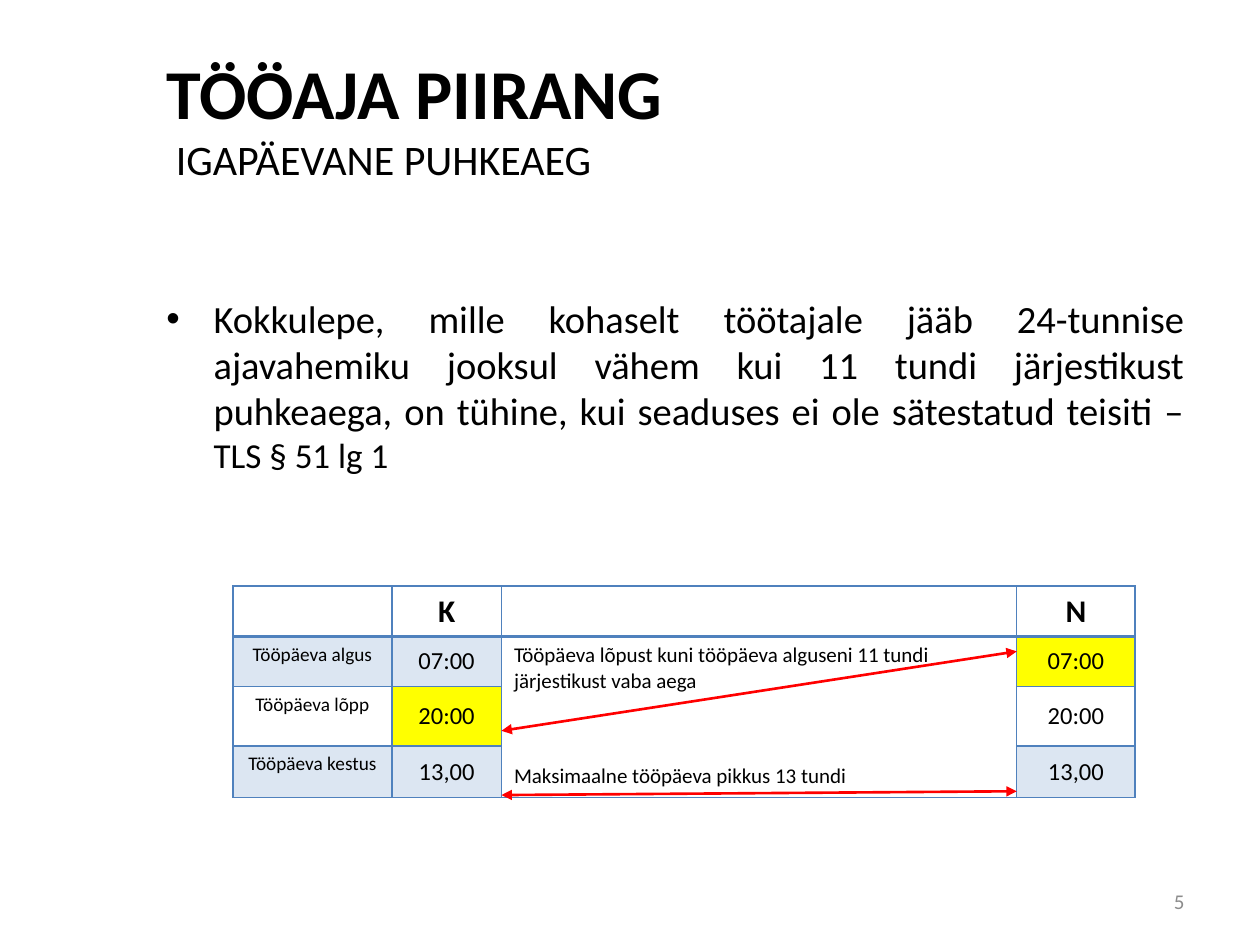
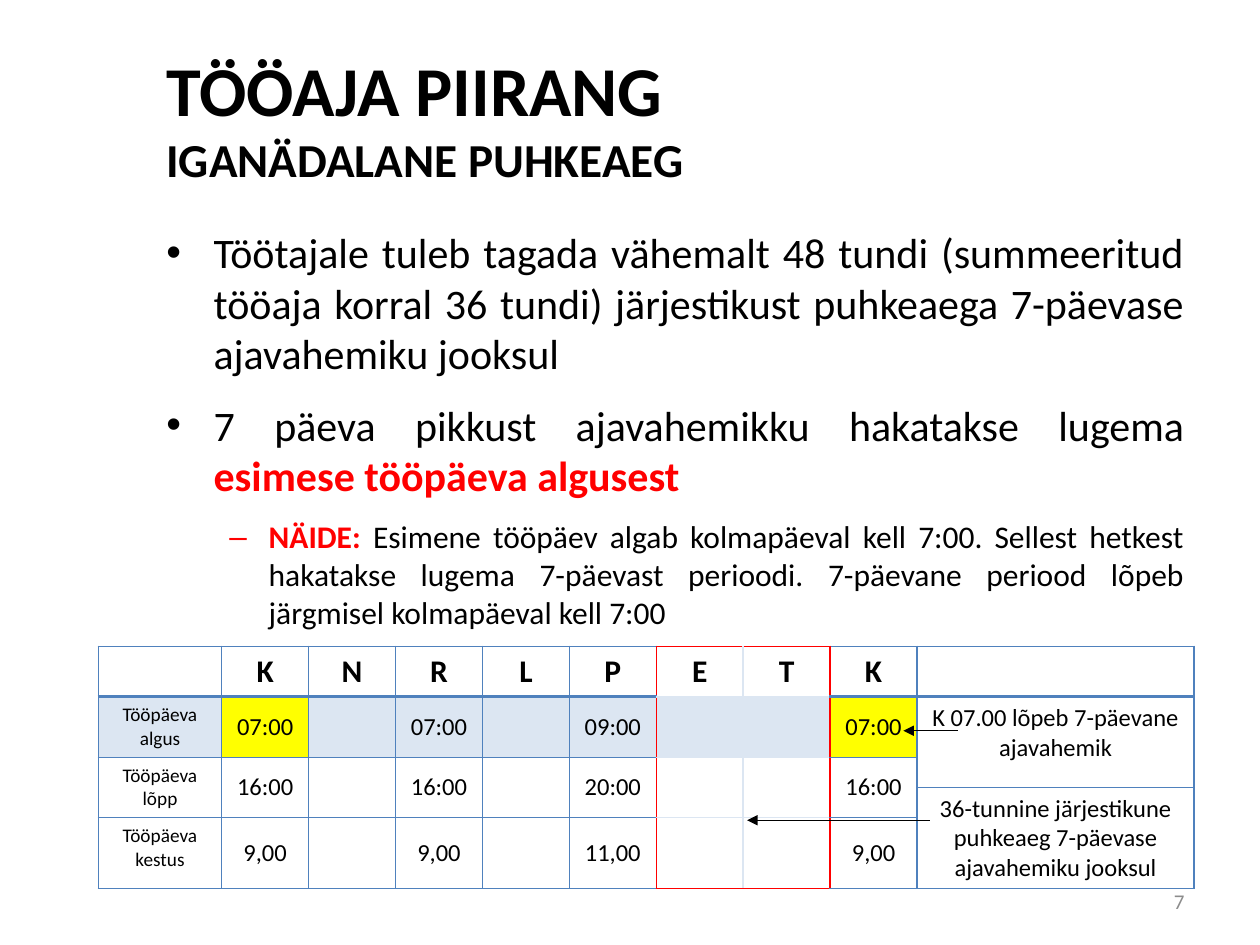
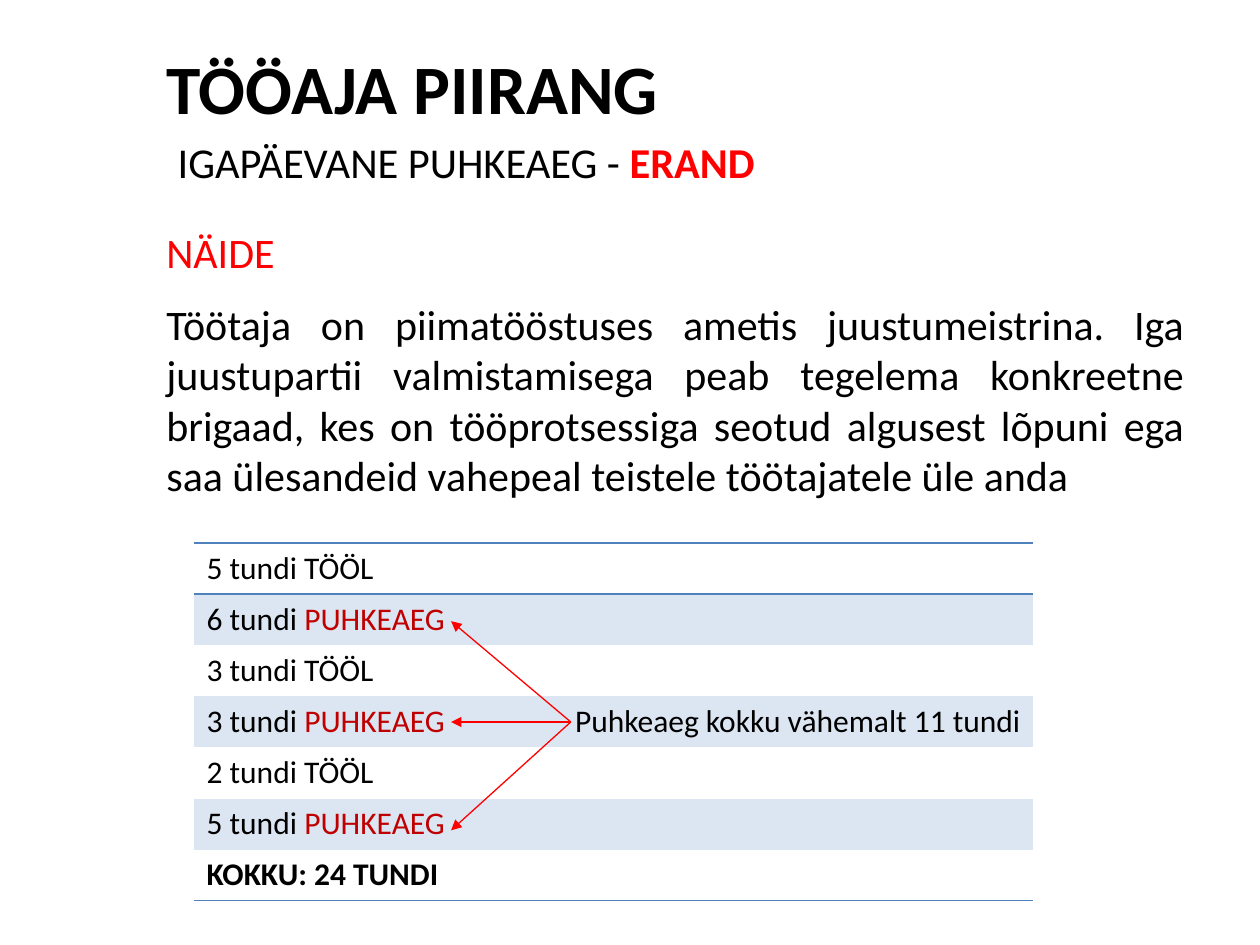
from lxml.etree import SubElement
from pptx import Presentation
from pptx.dml.color import RGBColor
from pptx.enum.shapes import MSO_CONNECTOR
from pptx.enum.text import MSO_ANCHOR, MSO_AUTO_SIZE, PP_ALIGN
from pptx.oxml.ns import qn
from pptx.util import Inches, Pt

FONT = "Calibri"
BLACK = "000000"
RED = "FF0000"
DARK_RED = "C00000"
BLUE = "4F81BD"
PALE = "DCE6F2"
YELLOW = "FFFF00"
GREY = "8C8C8C"
TITLE_BOX = (1.22, 0.3, 8.28, 1.25)
BODY_BOX = (1.22, 1.75, 8.28, 5.07)
NUMBER_BOX = (7.17, 6.95, 2.33, 0.4)


def rgb(color):
    return RGBColor.from_string(color)


def place(sp, box):
    sp.left, sp.top, sp.width, sp.height = map(Inches, box)


def write(p, runs):
    for text, size, color, bold in runs:
        r = p.add_run()
        r.text = text
        r.font.name = FONT
        r.font.size = Pt(size)
        r.font.bold = bold
        r.font.color.rgb = rgb(color)


def add_title(s, heading, subtitle):
    sp = s.shapes.title
    place(sp, TITLE_BOX)
    tf = sp.text_frame
    tf.auto_size = MSO_AUTO_SIZE.NONE
    tf.vertical_anchor = MSO_ANCHOR.MIDDLE
    p = tf.paragraphs[0]
    p.alignment = PP_ALIGN.LEFT
    write(p, heading)
    p.add_line_break()
    write(p, subtitle)


def add_body(s, items, bullets=True, top_inset=0.05):
    sp = s.placeholders[1]
    place(sp, BODY_BOX)
    tf = sp.text_frame
    tf.auto_size = MSO_AUTO_SIZE.NONE
    tf.margin_top = Inches(top_inset)
    for i, (level, runs) in enumerate(items):
        p = tf.paragraphs[0] if i == 0 else tf.add_paragraph()
        p.level = level
        p.alignment = PP_ALIGN.JUSTIFY
        p.space_before = p.space_after = Pt(4 if level else 6)
        if not bullets:
            pPr = p._p.get_or_add_pPr()
            pPr.set("marL", "0")
            pPr.set("indent", "0")
            SubElement(pPr, qn("a:buNone"))
        write(p, runs)


def add_number(s, number):
    sp = s.shapes.add_textbox(*map(Inches, NUMBER_BOX))
    tf = sp.text_frame
    tf.word_wrap = True
    tf.vertical_anchor = MSO_ANCHOR.MIDDLE
    p = tf.paragraphs[0]
    p.alignment = PP_ALIGN.RIGHT
    write(p, [(number, 12, GREY, False)])


def add_arrow(s, start, end, color, width, both_ends=False):
    line = s.shapes.add_connector(
        MSO_CONNECTOR.STRAIGHT, *map(Inches, (*start, *end)))
    line.line.color.rgb = rgb(color)
    line.line.width = Pt(width)
    spPr = line.element.spPr
    ln = spPr.find(qn("a:ln"))
    for tag in ("a:headEnd", "a:tailEnd") if both_ends else ("a:tailEnd",):
        SubElement(ln, qn(tag), type="triangle")
    SubElement(spPr, qn("a:effectLst"))


def set_borders(cell, edges):
    tcPr = cell._tc.get_or_add_tcPr()
    for side in "LRTB":
        color, width = edges.get(side, (None, 1))
        ln = SubElement(tcPr, qn("a:ln" + side), w=str(Pt(width)))
        if color:
            fill = SubElement(ln, qn("a:solidFill"))
            SubElement(fill, qn("a:srgbClr"), val=color)
        else:
            SubElement(ln, qn("a:noFill"))


def add_table(s, left, top, cols, rows, fill_of, edges_of):
    frame = s.shapes.add_table(
        len(rows), len(cols), *map(Inches, (left, top, sum(cols), sum(rows))))
    table = frame.table
    table.first_row = table.horz_banding = False
    for column, width in zip(table.columns, cols):
        column.width = Inches(width)
    for row, height in zip(table.rows, rows):
        row.height = Inches(height)
    for i in range(len(rows)):
        for j in range(len(cols)):
            cell = table.cell(i, j)
            set_borders(cell, edges_of(i, j))
            color = fill_of(i, j)
            if color:
                cell.fill.solid()
                cell.fill.fore_color.rgb = rgb(color)
            else:
                cell.fill.background()
            SubElement(cell.text_frame.paragraphs[0]._p,
                       qn("a:endParaRPr"), sz="1100")
    return table


def fill_cell(cell, runs, align=PP_ALIGN.CENTER, anchor=MSO_ANCHOR.TOP):
    cell.vertical_anchor = anchor
    p = cell.text_frame.paragraphs[0]
    p.alignment = align
    write(p, runs)


def fill_schedule(table, days, labelled_rows):
    for j, day in days.items():
        fill_cell(table.cell(0, j), [(day, 18, BLACK, True)],
                  anchor=MSO_ANCHOR.MIDDLE)
    for i, (label, times) in labelled_rows.items():
        fill_cell(table.cell(i, 0), [(label, 11, BLACK, False)])
        for j, time in times.items():
            fill_cell(table.cell(i, j), [(time, 14, BLACK, False)],
                      anchor=MSO_ANCHOR.MIDDLE)


def grid_edges(i, j):
    edges = {side: (BLUE, 1) for side in "LRTB"}
    if i < 2:
        edges["B" if i == 0 else "T"] = (BLUE, 2)
    return edges


def rest_day_edges(i, j):
    edges = grid_edges(i, j)
    if j == 5:
        edges["R"] = (RED, 1)
    elif j == 8:
        edges["L"] = (RED, 1)
    elif j in (6, 7):
        edges = {"L": (RED if j == 6 else PALE, 1),
                 "R": (RED if j == 7 else PALE, 1),
                 "T": (RED if i == 0 else PALE, 1),
                 "B": (RED if i == 4 else PALE, 1)}
    return edges


def daily_rest(s):
    add_title(s, [("TÖÖAJA PIIRANG", 40, BLACK, True)],
              [(" IGAPÄEVANE PUHKEAEG", 24, BLACK, False)])
    add_body(s, [(0, [
        ("Kokkulepe, mille kohaselt töötajale jääb 24-tunnise ajavahemiku "
         "jooksul vähem kui 11 tundi järjestikust puhkeaega, on tühine, kui "
         "seaduses ei ole sätestatud teisiti – ", 22, BLACK, False),
        ("TLS § 51 lg 1", 20, BLACK, False)])], top_inset=0.59)
    add_number(s, "5")

    def fill_of(i, j):
        if (i, j) in ((1, 3), (2, 1)):
            return YELLOW
        return PALE if i in (1, 3) and j != 2 else None

    table = add_table(s, 1.85, 4.65, [1.26, 0.87, 4.09, 0.94],
                      [0.4, 0.4, 0.47, 0.41], fill_of, grid_edges)
    table.cell(1, 2).merge(table.cell(3, 2))
    fill_schedule(table, {1: "K", 3: "N"}, {
        i: (label, {1: time, 3: time}) for i, (label, time) in enumerate([
            ("Tööpäeva algus", "07:00"),
            ("Tööpäeva lõpp", "20:00"),
            ("Tööpäeva kestus", "13,00")], 1)})
    note = table.cell(1, 2)
    fill_cell(note, [("Tööpäeva lõpust kuni tööpäeva alguseni 11 tundi "
                      "järjestikust vaba aega", 12, BLACK, False)],
              PP_ALIGN.LEFT)
    p = note.text_frame.add_paragraph()
    p.space_before = Pt(40)
    write(p, [("Maksimaalne tööpäeva pikkus 13 tundi", 12, BLACK, False)])
    add_arrow(s, (3.98, 5.8), (8.07, 5.17), RED, 1.5, True)
    add_arrow(s, (3.98, 6.31), (8.07, 6.28), RED, 1.5, True)


def weekly_rest(s):
    add_title(s, [("TÖÖAJA PIIRANG", 40, BLACK, True)],
              [("IGANÄDALANE PUHKEAEG", 27, BLACK, True)])
    add_body(s, [
        (0, [("Töötajale tuleb tagada vähemalt 48 tundi (summeeritud tööaja "
              "korral 36 tundi) järjestikust puhkeaega 7-päevase ajavahemiku "
              "jooksul", 24, BLACK, False)]),
        (0, [("7 päeva pikkust ajavahemikku hakatakse lugema ",
              24, BLACK, False),
             ("esimese tööpäeva algusest", 24, RED, True)]),
        (1, [("NÄIDE:", 18, RED, True),
             (" Esimene tööpäev algab kolmapäeval kell 7:00. Sellest hetkest "
              "hakatakse lugema 7-päevast perioodi. 7-päevane periood lõpeb "
              "järgmisel kolmapäeval kell 7:00", 18, BLACK, False)])])
    add_number(s, "7")

    def fill_of(i, j):
        if i == 1 and j in (1, 8):
            return YELLOW
        return PALE if i == 1 and j != 9 else None

    table = add_table(s, 0.78, 5.13, [0.98] + [0.69] * 8 + [2.2],
                      [0.4, 0.48, 0.24, 0.24, 0.56], fill_of, rest_day_edges)
    for j in range(9):
        table.cell(2, j).merge(table.cell(3, j))
    fill_schedule(table, dict(enumerate("KNRLPETK", 1)), {
        i: (label, dict(zip((1, 3, 5, 8), times))) for i, label, times in [
            (1, "Tööpäeva algus", ("07:00", "07:00", "09:00", "07:00")),
            (2, "Tööpäeva lõpp", ("16:00", "16:00", "20:00", "16:00")),
            (4, "Tööpäeva kestus", ("9,00", "9,00", "11,00", "9,00"))]})
    for i, note in [
            (1, "K 07.00 lõpeb 7-päevane ajavahemik"),
            (3, "36-tunnine järjestikune puhkeaeg 7-päevase ajavahemiku "
                "jooksul")]:
        table.cell(i, 9).merge(table.cell(i + 1, 9))
        fill_cell(table.cell(i, 9), [(note, 14, BLACK, False)])
    add_arrow(s, (7.6, 5.8), (7.17, 5.8), BLACK, 0.75)
    add_arrow(s, (7.38, 6.51), (5.93, 6.51), BLACK, 0.75)


def daily_rest_exception(s):
    add_title(s, [("TÖÖAJA PIIRANG", 39.6, BLACK, True)],
              [(" ", 28.8, BLACK, False),
               ("IGAPÄEVANE PUHKEAEG - ", 24.3, BLACK, False),
               ("ERAND", 24.3, RED, True)])
    add_body(s, [
        (0, [("NÄIDE", 24, RED, False)]),
        (0, [("Töötaja on piimatööstuses ametis juustumeistrina. Iga "
              "juustupartii valmistamisega peab tegelema konkreetne brigaad, "
              "kes on tööprotsessiga seotud algusest lõpuni ega saa "
              "ülesandeid vahepeal teistele töötajatele üle anda",
              24, BLACK, False)])], bullets=False)

    def fill_of(i, j):
        return PALE if i % 2 else None

    def edges_of(i, j):
        sides = {0: "TB", 1: "T", 6: "B"}.get(i, "")
        return {side: (BLUE, 1) for side in sides}

    table = add_table(s, 1.54, 4.31, [2.36, 4.3], [0.4] * 7,
                      fill_of, edges_of)
    for i, hours in enumerate((5, 6, 3, 3, 2, 5)):
        kind, color = ("PUHKEAEG", DARK_RED) if i % 2 else ("TÖÖL", BLACK)
        fill_cell(table.cell(i, 0), [(f"{hours} tundi ", 18, BLACK, False),
                                     (kind, 18, color, False)], PP_ALIGN.LEFT)
    fill_cell(table.cell(6, 0), [("KOKKU: 24 TUNDI", 18, BLACK, True)],
              PP_ALIGN.LEFT)
    fill_cell(table.cell(3, 1),
              [("Puhkeaeg kokku vähemalt 11 tundi", 18, BLACK, False)],
              PP_ALIGN.RIGHT)
    for y in (4.93, 5.73, 6.59):
        add_arrow(s, (4.53, 5.73), (3.58, y), RED, 0.75)


def main():
    prs = Presentation()
    prs.slide_width, prs.slide_height = Inches(10), Inches(7.5)
    for build in (daily_rest, weekly_rest, daily_rest_exception):
        build(prs.slides.add_slide(prs.slide_layouts[1]))
    prs.save("out.pptx")


if __name__ == "__main__":
    main()
